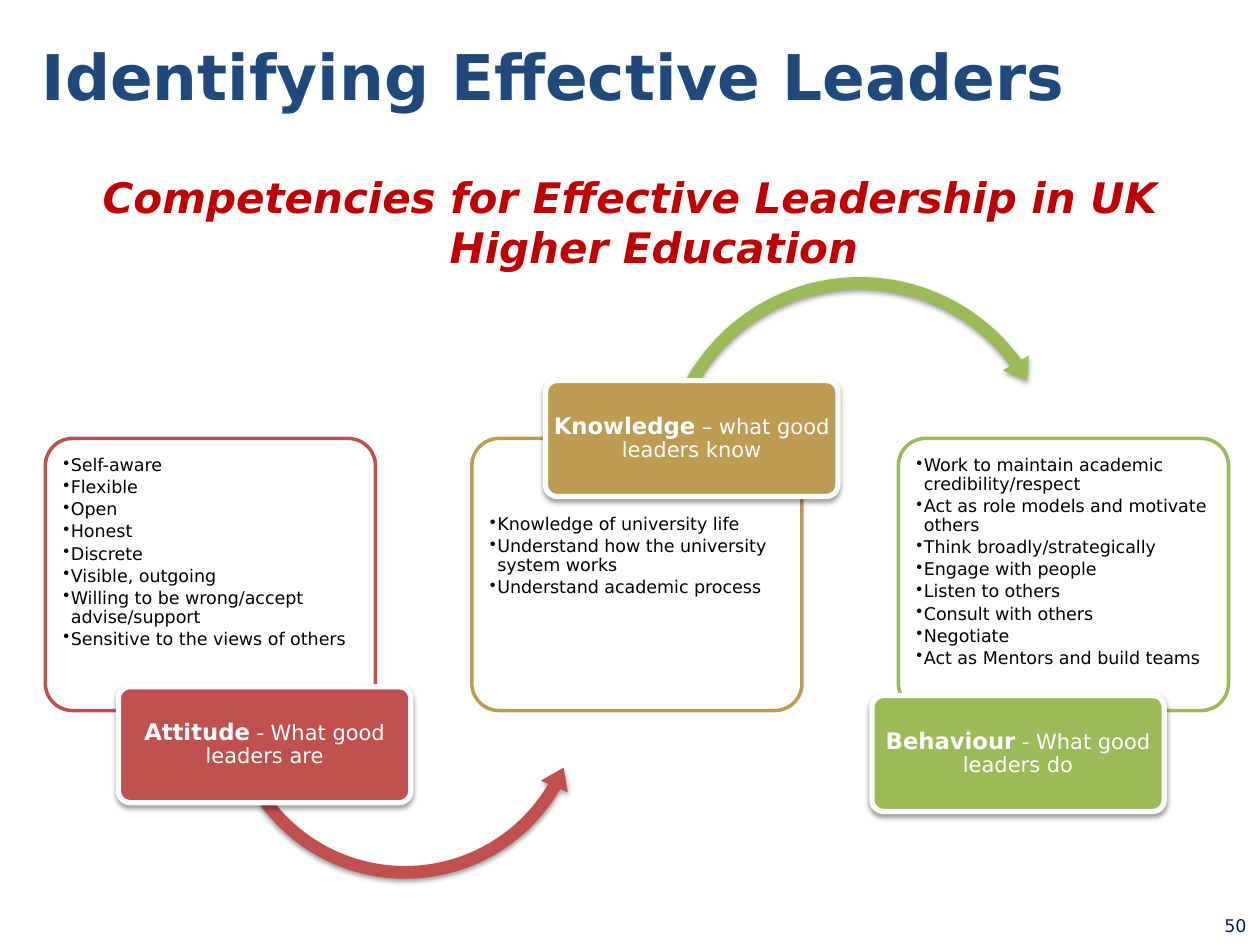
from lxml import etree
from pptx import Presentation
from pptx.dml.color import RGBColor
from pptx.enum.shapes import MSO_SHAPE
from pptx.enum.text import MSO_ANCHOR, MSO_AUTO_SIZE, PP_ALIGN
from pptx.oxml.ns import qn
from pptx.util import Inches, Pt

ROUNDED = MSO_SHAPE.ROUNDED_RECTANGLE
ARC_UNDER, ARC_OVER = MSO_SHAPE.LEFT_CIRCULAR_ARROW, MSO_SHAPE.CIRCULAR_ARROW
LEFT, CENTER = PP_ALIGN.LEFT, PP_ALIGN.CENTER
TOP, MIDDLE = MSO_ANCHOR.TOP, MSO_ANCHOR.MIDDLE
NO_AUTOFIT = MSO_AUTO_SIZE.NONE

FONT = "DejaVu Sans"
COLORS = {"title": "1F497D", "subtitle": "C00000", "number": "002060",
          "text": "000000", "white": "FFFFFF",
          "attitude": "C0504D", "knowledge": "BD9B53", "behaviour": "9BBB59"}

PANEL_SIZE = (2.62, 2.16)
PANEL_TOP = 3.48
PANEL_LEFT, PANEL_STEP = 0.36, 3.385
LABEL_SIZE = (2.32, 0.92)

COMPETENCIES = [
    {"color": "attitude", "label_at": (0.94, 5.45), "text_drop": 0,
     "label": ("Attitude", " - What good leaders are"),
     "points": ["Self-aware", "Flexible", "Open", "Honest", "Discrete",
                "Visible, outgoing", "Willing to be wrong/accept advise/support",
                "Sensitive to the views of others"],
     "arrow": (ARC_UNDER, (1.73, 4.07, 2.97, 2.97),
               (0.034, 4.175, 18.063, 86.377, 0.039))},
    {"color": "knowledge", "label_at": (4.33, 3.02), "text_drop": 0.47,
     "label": ("Knowledge", " – what good leaders know"),
     "points": ["Knowledge of university life",
                "Understand how the university system works",
                "Understand academic process"],
     "arrow": (ARC_OVER, (5.18, 2.13, 3.29, 3.29),
               (0.03, 3.745, 194.5, 125.755, 0.036)),
     "arrow_color": "behaviour"},
    {"color": "behaviour", "label_at": (6.92, 5.52), "text_drop": 0,
     "label": ("Behaviour", " - What good leaders do"),
     "points": ["Work to maintain academic credibility/respect",
                "Act as role models and motivate others",
                "Think broadly/strategically", "Engage with people",
                "Listen to others", "Consult with others", "Negotiate",
                "Act as Mentors and build teams"]},
]


def rgb(name):
    return RGBColor.from_string(COLORS[name])


def inches(box):
    return [Inches(length) for length in box]


def place(shape, box):
    shape.left, shape.top, shape.width, shape.height = inches(box)


def set_all(target, **values):
    for name, value in values.items():
        setattr(target, name, value)


def set_frame(frame, anchor, margins=(0.1, 0.05, 0.1, 0.05)):
    left, top, right, bottom = inches(margins)
    set_all(frame, word_wrap=True, auto_size=NO_AUTOFIT, vertical_anchor=anchor,
            margin_left=left, margin_top=top, margin_right=right, margin_bottom=bottom)


def add_run(paragraph, text, size, color, **style):
    run = paragraph.add_run()
    run.text = text
    set_all(run.font, name=FONT, size=Pt(size), **style)
    run.font.color.rgb = rgb(color)


def set_indent(paragraph, indent, bullet=None):
    """Give a hanging indent, with the bullet character if there is one."""
    properties = paragraph._p.get_or_add_pPr()
    properties.set("marL", str(Inches(indent)))
    properties.set("indent", str(-Inches(indent)))
    if bullet:
        etree.SubElement(properties, qn("a:buChar"), char=bullet)
    else:
        etree.SubElement(properties, qn("a:buNone"))


def add_filled_shape(slide, kind, box, fill, adjustments, line=None, line_width=0):
    shape = slide.shapes.add_shape(kind, *inches(box))
    shape.shadow.inherit = False
    for index, value in enumerate(adjustments):
        shape.adjustments[index] = value
    shape.fill.solid()
    shape.fill.fore_color.rgb = rgb(fill)
    if line:
        shape.line.color.rgb = rgb(line)
        shape.line.width = Pt(line_width)
    else:
        shape.line.fill.background()
    return shape


def cast_shadow(shape):
    effects = shape._element.spPr.find(qn("a:effectLst"))
    shadow = etree.SubElement(effects, qn("a:outerShdw"), blurRad=str(Pt(3.1)),
                              dist=str(Pt(1.6)), dir="5400000", rotWithShape="0")
    color = etree.SubElement(shadow, qn("a:srgbClr"), val="000000")
    etree.SubElement(color, qn("a:alpha"), val="38000")


def add_panel(slide, box, color, points, text_drop):
    panel = add_filled_shape(slide, ROUNDED, box, "white", [0.1], color, 2)
    frame = panel.text_frame
    set_frame(frame, TOP, (0.08, 0.08 + text_drop, 0.08, 0.08))
    for index, point in enumerate(points):
        paragraph = frame.add_paragraph() if index else frame.paragraphs[0]
        set_indent(paragraph, 0.06, "•")
        set_all(paragraph, alignment=LEFT, line_spacing=0.9, space_after=Pt(1.8))
        add_run(paragraph, point, 10, "text")


def add_label(slide, box, color, name, meaning):
    label = add_filled_shape(slide, ROUNDED, box, color, [0.1], "white", 3)
    cast_shadow(label)
    set_frame(label.text_frame, MIDDLE, (0, 0, 0, 0))
    paragraph = label.text_frame.paragraphs[0]
    set_all(paragraph, alignment=CENTER, line_spacing=0.9)
    add_run(paragraph, name, 13, "white", bold=True)
    add_run(paragraph, meaning, 12, "white", bold=False)


def add_competency(slide, box, competency):
    """Draw a panel with its points, the arrow to the next one and its label."""
    color = competency["color"]
    add_panel(slide, box, color, competency["points"], competency["text_drop"])
    if "arrow" in competency:
        kind, arrow_box, adjustments = competency["arrow"]
        arrow_color = competency.get("arrow_color", color)
        cast_shadow(add_filled_shape(slide, kind, arrow_box, arrow_color, adjustments))
    add_label(slide, (*competency["label_at"], *LABEL_SIZE), color, *competency["label"])


def fill_title(title, box):
    place(title, box)
    set_frame(title.text_frame, MIDDLE)
    paragraph = title.text_frame.paragraphs[0]
    paragraph.alignment = LEFT
    add_run(paragraph, "Identifying Effective Leaders", 36, "title", bold=True)


def fill_subtitle(body, box):
    place(body, box)
    set_frame(body.text_frame, TOP)
    paragraph = body.text_frame.paragraphs[0]
    set_indent(paragraph, 0.38)
    set_all(paragraph, alignment=CENTER, space_before=Pt(0))
    add_run(paragraph, "Competencies for Effective Leadership in UK Higher Education",
            24, "subtitle", bold=True, italic=True)


def add_slide_number(slide, box):
    frame = slide.shapes.add_textbox(*inches(box)).text_frame
    set_frame(frame, MIDDLE, (0, 0, 0, 0))
    frame.paragraphs[0].alignment = CENTER
    add_run(frame.paragraphs[0], "50", 10, "number")


def main():
    presentation = Presentation()
    set_all(presentation, slide_width=Inches(10), slide_height=Inches(7.5))
    slide = presentation.slides.add_slide(presentation.slide_layouts[1])
    fill_title(slide.shapes.title, (0.23, 0.05, 8.55, 1.09))
    fill_subtitle(slide.placeholders[1], (0.5, 1.31, 9, 5.48))
    for column, competency in enumerate(COMPETENCIES):
        left = PANEL_LEFT + column * PANEL_STEP
        add_competency(slide, (left, PANEL_TOP, *PANEL_SIZE), competency)
    add_slide_number(slide, (9.65, 7.19, 0.31, 0.31))
    presentation.save("out.pptx")


if __name__ == "__main__":
    main()
